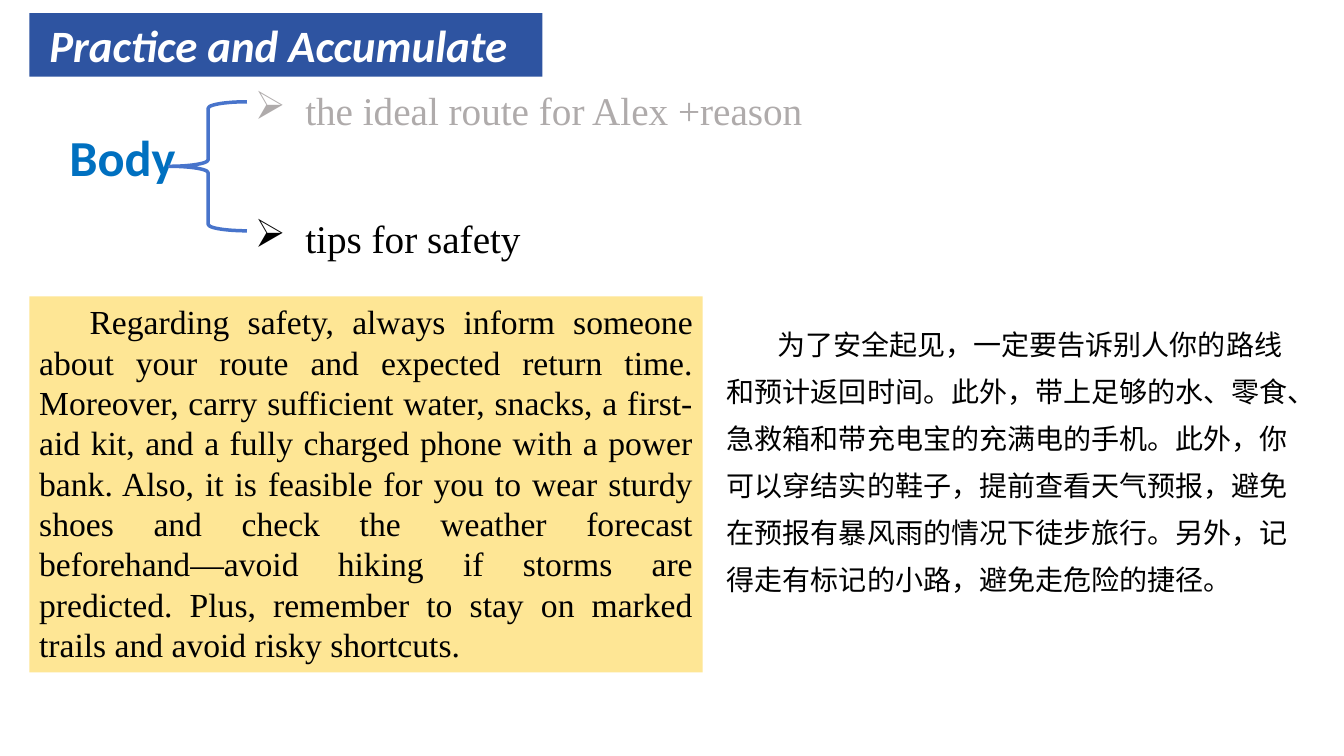
from dataclasses import dataclass
from typing import Optional

from lxml import etree
from pptx import Presentation
from pptx import util as u
from pptx.dml.color import RGBColor
from pptx.enum import shapes, text
from pptx.oxml import ns

COLOURS = {
    "banner": "2E54A1",
    "white": "FFFFFF",
    "heading": "0070C0",
    "brace": "4874CB",
    "panel": "FEE695",
    "black": "000000",
    "faded": "AFABAB",
}
SERIF = "Times New Roman"
ENGLISH = (
    "Regarding safety, always inform someone about your route and expected return time. "
    "Moreover, carry sufficient water, snacks, a first-aid kit, and a fully charged phone "
    "with a power bank. Also, it is feasible for you to wear sturdy shoes and check the "
    "weather forecast beforehand—avoid hiking if storms are predicted. Plus, remember to "
    "stay on marked trails and avoid risky shortcuts."
)
CHINESE = (
    "为了安全起见，一定要告诉别人你的路线和预计返回时间。此外，带上足够的水、零食、"
    "急救箱和带充电宝的充满电的手机。此外，你可以穿结实的鞋子，提前查看天气预报，"
    "避免在预报有暴风雨的情况下徒步旅行。另外，记得走有标记的小路，避免走危险的捷径。"
)


@dataclass(frozen=True)
class TextBlock:
    words: str
    left: float
    top: float
    width: float
    height: float
    size: int
    font: str = SERIF
    colour: str = "black"
    fill: Optional[str] = None
    bold: bool = False
    italic: bool = False
    margin: float = 0
    indent: float = 0
    spacing: float = 1
    bullet: Optional[str] = None
    align: text.PP_ALIGN = text.PP_ALIGN.LEFT
    anchor: text.MSO_ANCHOR = text.MSO_ANCHOR.TOP
    grows: bool = False


def tip(words: str, top: float, width: float, colour: str) -> TextBlock:
    return TextBlock(words, 2.43, top, width, 0.85, 28, colour=colour, margin=0.5,
                     indent=-0.5, spacing=1.6, bullet="➢", grows=True)


BANNER = TextBlock("Practice and Accumulate", 0.29, 0.13, 5.09, 0.63, 32, "Calibri",
                   "white", "banner", bold=True, italic=True, margin=0.1,
                   anchor=text.MSO_ANCHOR.MIDDLE)
BODY = TextBlock("Body", 0.59, 1.2, 1.54, 0.89, 36, "Calibri", "heading", bold=True)
PASSAGES = [
    TextBlock(ENGLISH, 0.29, 2.94, 6.68, 3.73, 24, fill="panel", indent=0.5,
              align=text.PP_ALIGN.JUSTIFY, grows=True),
    TextBlock(CHINESE, 7.11, 3.07, 5.82, 2.93, 20, "Noto Sans CJK SC", indent=0.5,
              spacing=1.4, grows=True),
]
TIPS = [
    tip("tips for safety", 1.8, 4.68, "black"),
    tip("the ideal route for Alex +reason", 0.53, 6.67, "faded"),
]


def rgb(name: str) -> RGBColor:
    return RGBColor.from_string(COLOURS[name])


def draw_block(slide, block: TextBlock) -> None:
    box = [u.Inches(n) for n in (block.left, block.top, block.width, block.height)]
    if block.fill:
        shape = slide.shapes.add_shape(shapes.MSO_SHAPE.RECTANGLE, *box)
        shape.shadow.inherit = False
        shape.fill.solid()
        shape.fill.fore_color.rgb = rgb(block.fill)
        shape.line.fill.background()
    else:
        shape = slide.shapes.add_textbox(*box)

    frame = shape.text_frame
    frame.text = block.words
    frame.word_wrap = True
    frame.vertical_anchor = block.anchor
    if block.grows:
        frame.auto_size = text.MSO_AUTO_SIZE.SHAPE_TO_FIT_TEXT

    paragraph = frame.paragraphs[0]
    properties = paragraph._p.get_or_add_pPr()
    properties.set("marL", str(u.Inches(block.margin)))
    properties.set("indent", str(u.Inches(block.indent)))
    if block.bullet:
        etree.SubElement(properties, ns.qn("a:buChar")).set("char", block.bullet)
    paragraph.alignment = block.align
    paragraph.line_spacing = block.spacing

    run = paragraph.runs[0]
    run.font.size = u.Pt(block.size)
    run.font.name = block.font
    run.font.bold = block.bold
    run.font.italic = block.italic
    run.font.color.rgb = rgb(block.colour)
    east_asian = etree.SubElement(run._r.get_or_add_rPr(), ns.qn("a:ea"))
    east_asian.set("typeface", block.font)


def draw_brace(slide) -> None:
    brace = slide.shapes.add_shape(
        shapes.MSO_SHAPE.LEFT_BRACE,
        u.Inches(1.68), u.Inches(1.01), u.Inches(0.77), u.Inches(1.28))
    brace.shadow.inherit = False
    brace.fill.background()
    brace.line.color.rgb = rgb("brace")
    brace.line.width = u.Pt(2.5)


def main() -> None:
    presentation = Presentation()
    presentation.slide_width = u.Inches(13.33)
    presentation.slide_height = u.Inches(7.5)
    slide = presentation.slides.add_slide(presentation.slide_layouts[6])
    for block in (BANNER, BODY):
        draw_block(slide, block)
    draw_brace(slide)
    for block in PASSAGES + TIPS:
        draw_block(slide, block)
    presentation.save("out.pptx")


if __name__ == "__main__":
    main()
